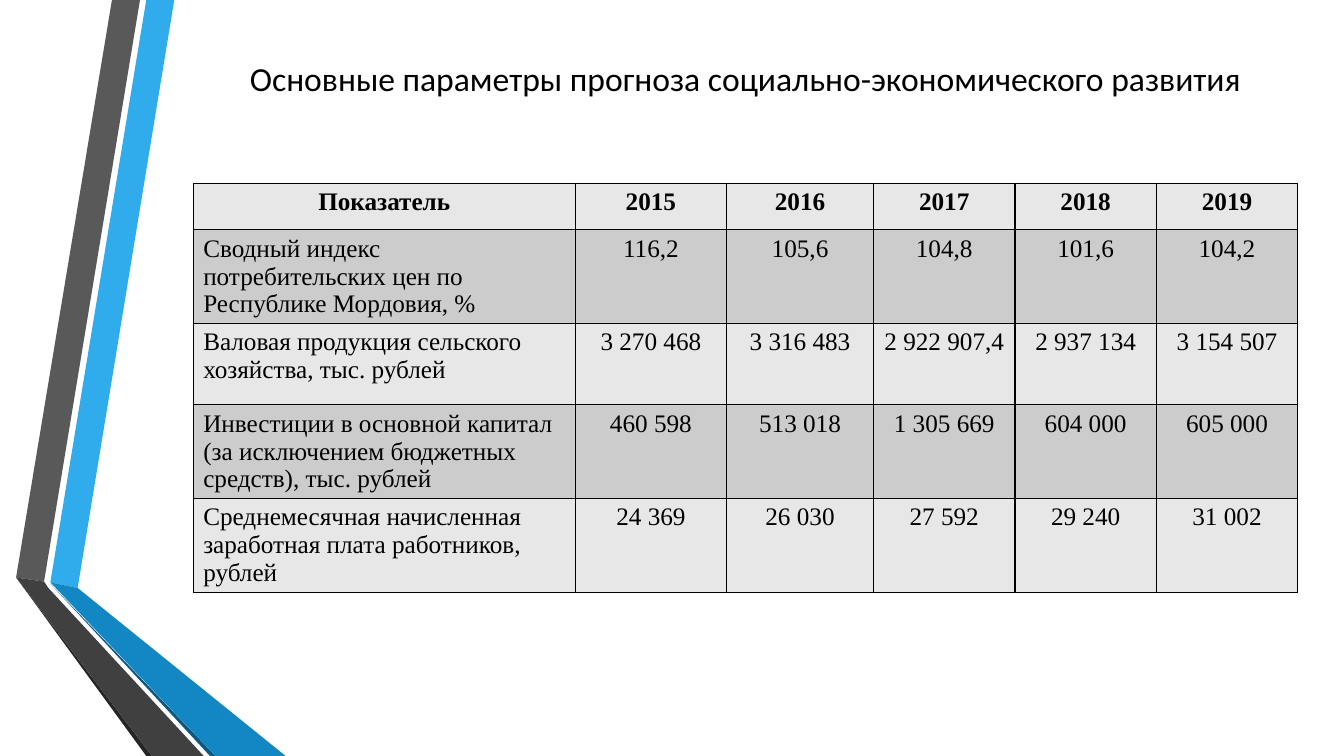
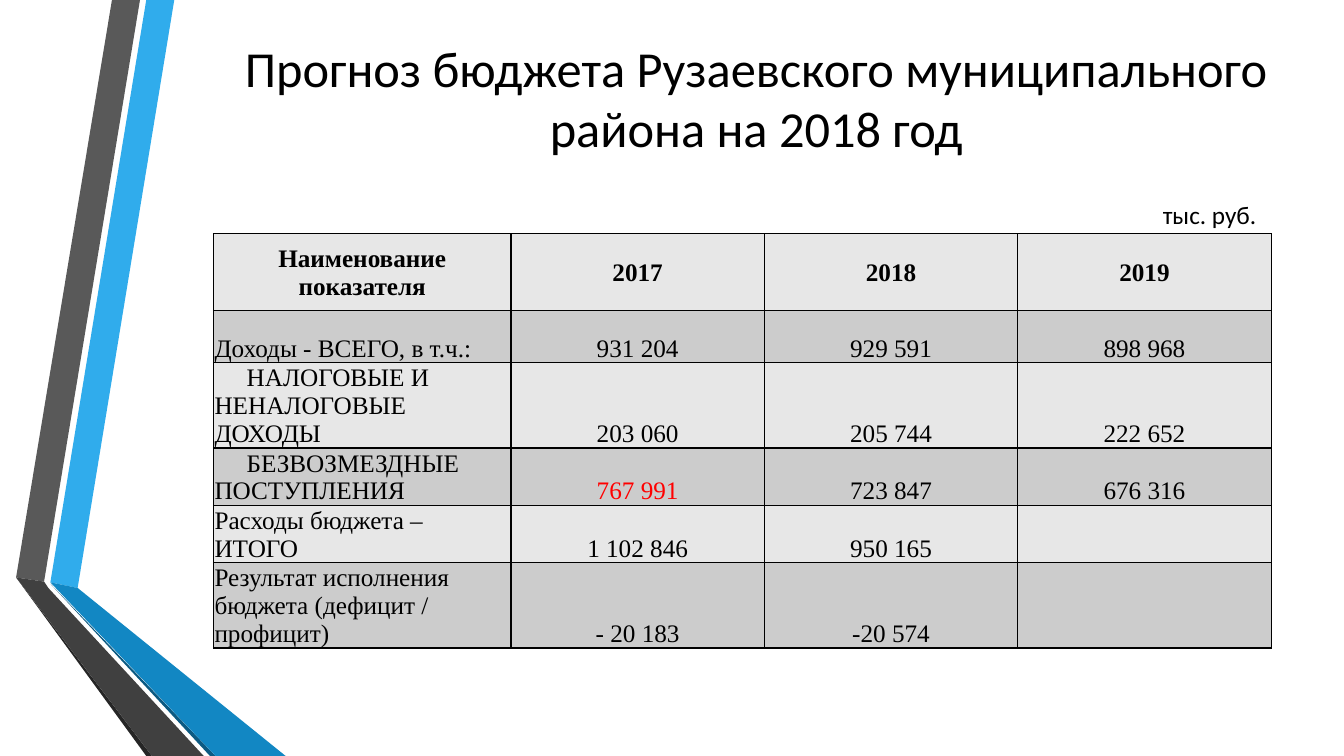
from lxml.etree import SubElement
from pptx import Presentation
from pptx.dml.color import RGBColor
from pptx.enum.text import MSO_ANCHOR as Anchor, MSO_AUTO_SIZE as AutoSize, PP_ALIGN as Align
from pptx.oxml import parse_xml
from pptx.oxml.ns import nsdecls, qn
from pptx.util import Pt

# Shared look
TITLE_FONT, TABLE_FONT = "Calibri", "Times New Roman"
BLACK, RED = "000000", "FF0000"
ROW_FILLS = ("E7E7E7", "CCCCCC")
TEXT_SIZE = 18

# Ribbon outlines in points, from back to front
RIBBONS = [
    ("30ACEC", [(36, 416), (55.5, 420), (124.5, 0), (104.5, 0)]),
    ("595959", [(100, 0), (80, 0), (11.5, 412.5), (31.5, 415.5)]),
    ("262626", [(11.5, 412.5), (104.5, 540), (108.5, 540)]),
    ("0C5A82", [(36, 417), (150, 540), (154, 540)]),
    ("1287C3", [(36, 416), (154, 540), (204, 540), (55.5, 420)]),
    ("404040", [(145.5, 540), (34.5, 420), (31.5, 415.5), (11.5, 412.5), (108.5, 540)]),
]

FORECAST_ROWS = [
    ["Показатель", "2015", "2016", "2017", "2018", "2019"],
    ["Сводный индекс потребительских цен по Республике Мордовия, %",
     "116,2", "105,6", "104,8", "101,6", "104,2"],
    ["Валовая продукция сельского хозяйства, тыс. рублей",
     "3 270 468", "3 316 483", "2 922 907,4", "2 937 134", "3 154 507"],
    ["Инвестиции в основной капитал (за исключением бюджетных средств), тыс. рублей",
     "460 598", "513 018", "1 305 669", "604 000", "605 000"],
    ["Среднемесячная начисленная заработная плата работников, рублей",
     "24 369", "26 030", "27 592", "29 240", "31 002"],
]
BUDGET_ROWS = [
    ["Наименование\vпоказателя", "2017", "2018", "2019"],
    ["Доходы - ВСЕГО, в т.ч.:", "931 204", "929 591", "898 968"],
    ["НАЛОГОВЫЕ И НЕНАЛОГОВЫЕ ДОХОДЫ", "203 060", "205 744", "222 652"],
    ["БЕЗВОЗМЕЗДНЫЕ ПОСТУПЛЕНИЯ", "767 991", "723 847", "676 316"],
    ["Расходы бюджета – ИТОГО", "1 102 846", "950 165", ""],
    ["Результат исполнения бюджета (дефицит / профицит)", "- 20 183", "-20 574", ""],
]


def paint(color_format, color):
    color_format.rgb = RGBColor.from_string(color)


def style_text(text_frame, font, size, align, color=BLACK, bold=False):
    for paragraph in text_frame.paragraphs:
        paragraph.alignment = align
        for run in paragraph.runs:
            run.font.name = font
            run.font.size = Pt(size)
            run.font.bold = bold
            paint(run.font.color, color)


def add_ribbons(slide):
    """Draw the ribbons and move them to the layout, behind its placeholders."""
    layout_tree = slide.slide_layout.shapes.element
    for index, (color, points) in enumerate(RIBBONS):
        start, *others = [(Pt(x), Pt(y)) for x, y in points]
        builder = slide.shapes.build_freeform(*start)
        builder.add_line_segments(others, close=True)
        shape = builder.convert_to_shape()
        shape.fill.solid()
        paint(shape.fill.fore_color, color)
        shape.line.fill.background()
        shape.shadow.inherit = False
        layout_tree.insert(2 + index, shape.element)


def set_title(slide, text, size, left, top, width, height):
    title = slide.shapes.title
    title.left, title.top, title.width, title.height = map(Pt, (left, top, width, height))
    title.text_frame.text = text
    title.text_frame.auto_size = AutoSize.NONE
    title.text_frame.vertical_anchor = Anchor.MIDDLE
    style_text(title.text_frame, TITLE_FONT, size, Align.CENTER)


def add_label(slide, text, left, top, width, height):
    label = slide.shapes.add_textbox(*map(Pt, (left, top, width, height)))
    label.text_frame.text = text
    label.text_frame.word_wrap = False
    style_text(label.text_frame, TITLE_FONT, TEXT_SIZE, Align.LEFT)


def set_borders(cell):
    properties = cell._tc.get_or_add_tcPr()
    for index, side in enumerate(("lnL", "lnR", "lnT", "lnB")):
        line = parse_xml(f'<a:{side} {nsdecls("a")} w="{Pt(1)}"/>')
        fill = SubElement(line, qn("a:solidFill"))
        SubElement(fill, qn("a:srgbClr"), val=BLACK)
        properties.insert(index, line)


def add_table(slide, rows, left, top, widths, heights):
    frame = slide.shapes.add_table(len(rows), len(widths), Pt(left), Pt(top),
                                   Pt(sum(widths)), Pt(sum(heights)))
    table = frame.table
    for column, width in zip(table.columns, widths):
        column.width = Pt(width)
    for row, height in zip(table.rows, heights):
        row.height = Pt(height)
    for r, texts in enumerate(rows):
        for c, text in enumerate(texts):
            cell = table.cell(r, c)
            cell.text_frame.text = text
            is_label = r > 0 and c == 0
            style_text(cell.text_frame, TABLE_FONT, TEXT_SIZE,
                       Align.LEFT if is_label else Align.CENTER, bold=r == 0)
            cell.fill.solid()
            paint(cell.fill.fore_color, ROW_FILLS[r % 2])
            set_borders(cell)
    return table


def tighten_cells(table):
    """Remove the insets, centre the header and set the other rows at the bottom."""
    for r, row in enumerate(table.rows):
        for cell in row.cells:
            cell.margin_left = cell.margin_right = cell.margin_top = Pt(0.75)
            cell.margin_bottom = Pt(0)
            cell.vertical_anchor = Anchor.BOTTOM if r else Anchor.MIDDLE


def indent_first_line(cell, indent):
    properties = cell.text_frame.paragraphs[0]._p.get_or_add_pPr()
    properties.set("marL", "0")
    properties.set("indent", str(Pt(indent)))


def build_forecast(slide):
    set_title(slide, "Основные параметры прогноза социально-экономического развития",
              24, 138, 19.5, 789, 73)
    add_table(slide, FORECAST_ROWS, 138, 131, [273, 108, 105, 101, 101, 101],
              [33, 67, 58, 67, 67])


def build_budget(slide):
    set_title(slide, "Прогноз бюджета Рузаевского муниципального района на 2018 год",
              36, 129.5, 21.5, 821.5, 96)
    table = add_table(slide, BUDGET_ROWS, 152.5, 167, [212.5] + [181] * 3,
                      [55, 37, 61, 41, 41, 61])
    tighten_cells(table)
    for row in (2, 3):
        indent_first_line(table.cell(row, 0), 23)
    style_text(table.cell(3, 1).text_frame, TABLE_FONT, TEXT_SIZE, Align.CENTER, RED)
    add_label(slide, "тыс. руб.", 823.5, 138.5, 83.5, 29)


def main():
    presentation = Presentation()
    presentation.slide_width, presentation.slide_height = Pt(960), Pt(540)
    layout = presentation.slide_layouts.get_by_name("Title Only")
    forecast, budget = [presentation.slides.add_slide(layout) for _ in range(2)]
    add_ribbons(forecast)
    build_forecast(forecast)
    build_budget(budget)
    presentation.save("out.pptx")


if __name__ == "__main__":
    main()
